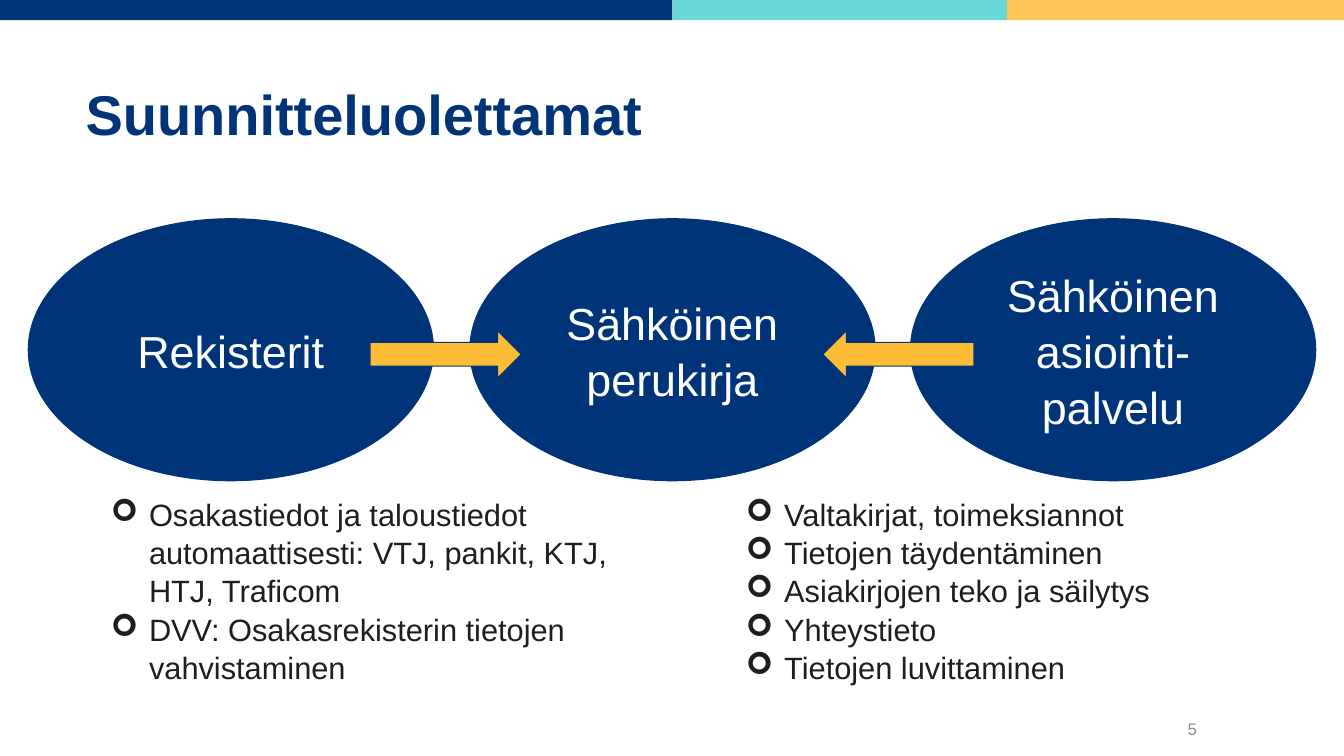
"""Build the slide on planning assumptions for the electronic estate inventory."""
from lxml import etree
from pptx import Presentation
from pptx.dml.color import RGBColor
from pptx.enum.shapes import MSO_SHAPE
from pptx.enum.text import MSO_ANCHOR, PP_ALIGN
from pptx.oxml.ns import qn
from pptx.util import Pt

EMU_PER_PX = 9144
RECT, OVAL, ARROW = MSO_SHAPE.RECTANGLE, MSO_SHAPE.OVAL, MSO_SHAPE.RIGHT_ARROW
TOP, MIDDLE, BOTTOM = MSO_ANCHOR.TOP, MSO_ANCHOR.MIDDLE, MSO_ANCHOR.BOTTOM
LEFT, CENTER, RIGHT = PP_ALIGN.LEFT, PP_ALIGN.CENTER, PP_ALIGN.RIGHT
NAVY, TEAL, YELLOW, ORANGE = "003479", "69D8D7", "FFC658", "FFBC37"
WHITE, INK, GREY = "FFFFFF", "1E1E1E", "8C8C8C"
BULLET_INDENT = 38

STRIPES = [(0, 667, NAVY), (667, 332, TEAL), (999, 334, YELLOW)]
STAGES = [
    (28, ["Rekisterit"]),
    (466, ["Sähköinen", "perukirja"]),
    (903, ["Sähköinen", "asiointi-palvelu"]),
]
FLOWS = [(367, 0), (816, 180)]
REGISTER_DUTIES = [
    "Osakastiedot ja taloustiedot automaattisesti: VTJ, pankit, KTJ, HTJ, Traficom",
    "DVV: Osakasrekisterin tietojen vahvistaminen",
]
SERVICE_DUTIES = [
    "Valtakirjat, toimeksiannot",
    "Tietojen täydentäminen",
    "Asiakirjojen teko ja säilytys",
    "Yhteystieto",
    "Tietojen luvittaminen",
]


def px(length):
    """Turn pixels into EMU."""
    return length * EMU_PER_PX


def paint(color_format, hex_color):
    """Set a colour from a hex string."""
    color_format.rgb = RGBColor.from_string(hex_color)


def add_bullet(paragraph):
    """Give a paragraph an arrowhead bullet with a hanging indent."""
    properties = paragraph._p.get_or_add_pPr()
    properties.set("marL", str(px(BULLET_INDENT)))
    properties.set("indent", str(-px(BULLET_INDENT)))
    etree.SubElement(properties, qn("a:buFont")).set("typeface", "Wingdings")
    etree.SubElement(properties, qn("a:buChar")).set("char", "➢")


def write(frame, lines, size, color, align=LEFT, anchor=TOP, bold=False,
          bulleted=False, spacing=1.04):
    """Fill a text frame with one formatted paragraph per line."""
    frame.word_wrap = True
    frame.vertical_anchor = anchor
    for index, line in enumerate(lines):
        paragraph = frame.add_paragraph() if index else frame.paragraphs[0]
        paragraph.text = line
        paragraph.alignment = align
        paragraph.line_spacing = spacing
        if bulleted:
            add_bullet(paragraph)
        font = paragraph.runs[0].font
        font.name, font.size, font.bold = "Arial", Pt(size), bold
        paint(font.color, color)


def add_text(slide, box, lines, size, color, **text_format):
    """Add a text box with formatted text."""
    frame = slide.shapes.add_textbox(*map(px, box)).text_frame
    write(frame, lines, size, color, **text_format)


def add_figure(slide, kind, box, fill, outline=None):
    """Add a filled preset shape, outlined when a line colour is given."""
    figure = slide.shapes.add_shape(kind, *map(px, box))
    figure.shadow.inherit = False
    figure.fill.solid()
    paint(figure.fill.fore_color, fill)
    if outline:
        paint(figure.line.color, outline)
        figure.line.width = Pt(0.75)
    else:
        figure.line.fill.background()
    return figure


def add_stage(slide, left, lines):
    """Add one labelled ellipse of the process."""
    stage = add_figure(slide, OVAL, (left, 217, 402, 260), NAVY, NAVY)
    write(stage.text_frame, lines, 32, WHITE, align=CENTER, anchor=MIDDLE)


def main():
    """Build and save the slide."""
    deck = Presentation()
    deck.slide_width, deck.slide_height = px(1333), px(750)
    slide = deck.slides.add_slide(deck.slide_layouts[6])

    for left, width, color in STRIPES:
        add_figure(slide, RECT, (left, 0, width, 20), color)
    add_text(slide, (75, 16, 1122, 134), ["Suunnitteluolettamat"], 40, NAVY,
             bold=True, anchor=BOTTOM, spacing=1)
    for left, lines in STAGES:
        add_stage(slide, left, lines)
    for left, rotation in FLOWS:
        flow = add_figure(slide, ARROW, (left, 328, 150, 47), ORANGE, NAVY)
        flow.rotation = rotation
    add_text(slide, (100, 485, 512, 195), REGISTER_DUTIES, 22, INK, bulleted=True)
    add_text(slide, (730, 485, 437, 195), SERVICE_DUTIES, 22, INK, bulleted=True)
    add_text(slide, (1106, 711, 91, 24), ["5"], 12, GREY, align=RIGHT, anchor=MIDDLE)

    deck.save("out.pptx")


if __name__ == "__main__":
    main()
